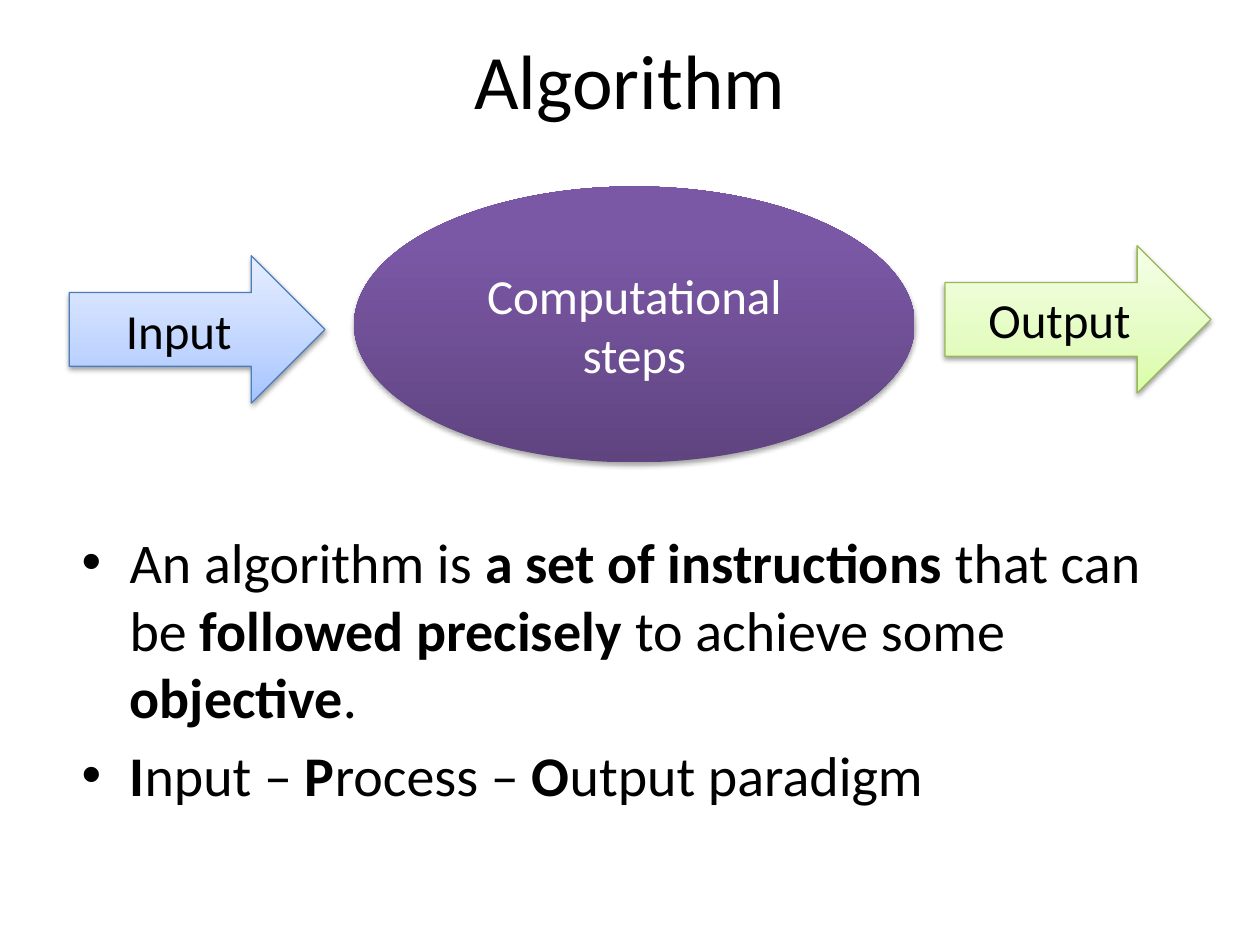
"""Build the algorithm slide: input, computational steps, output and a definition."""
from copy import deepcopy
from dataclasses import dataclass
from typing import Any, Optional

from lxml.etree import SubElement
from pptx import Presentation
from pptx.dml.color import RGBColor
from pptx.enum.shapes import MSO_SHAPE
from pptx.enum.text import MSO_ANCHOR, PP_ALIGN
from pptx.oxml.ns import qn
from pptx.util import Inches, Pt

BLACK = RGBColor(0x00, 0x00, 0x00)
WHITE = RGBColor(0xFF, 0xFF, 0xFF)
BLUE_LINE = RGBColor(0x4B, 0x7E, 0xBC)
BLUES = (RGBColor(0xA4, 0xC4, 0xFF), RGBColor(0xBF, 0xD4, 0xFF), RGBColor(0xE6, 0xEE, 0xFF))
PURPLES = (RGBColor(0x5F, 0x44, 0x80), RGBColor(0x7B, 0x58, 0xA6), RGBColor(0x7C, 0x57, 0xA8))
GREEN_LINE = RGBColor(0x98, 0xB9, 0x55)
GREENS = (RGBColor(0xDA, 0xFD, 0xA7), RGBColor(0xE4, 0xFC, 0xC2), RGBColor(0xF5, 0xFF, 0xE7))


@dataclass(frozen=True)
class Stage:
    label: str
    geometry: MSO_SHAPE
    box: tuple[float, float, float, float]
    gradient: tuple[RGBColor, ...]
    middle_stop: float
    ink: RGBColor
    outline: Optional[RGBColor]
    shadow_distance: float
    shadow_opacity: int


STAGES = (
    Stage("Input", MSO_SHAPE.RIGHT_ARROW, (0.55, 2.03, 2.03, 1.17),
          BLUES, 0.35, BLACK, BLUE_LINE, 1.6, 38),
    Stage("Computational steps", MSO_SHAPE.OVAL, (2.81, 1.48, 4.45, 2.19),
          PURPLES, 0.8, WHITE, None, 1.8, 35),
    Stage("Output", MSO_SHAPE.RIGHT_ARROW, (7.5, 1.95, 2.11, 1.17),
          GREENS, 0.35, BLACK, GREEN_LINE, 1.6, 38),
)

DEFINITION = (
    (("An algorithm is ", False), ("a set of instructions ", True), ("that can be ", False),
     ("followed precisely ", True), ("to achieve some ", False), ("objective", True),
     (".", False)),
    (("I", True), ("nput – ", False), ("P", True), ("rocess – ", False),
     ("O", True), ("utput paradigm", False)),
)


def apply_format(target: Any, values: dict[str, Any]) -> None:
    """Set each named attribute on the target."""
    for name, value in values.items():
        setattr(target, name, value)


def format_font(font: Any, size: int, ink: RGBColor, bold: bool = False) -> None:
    """Give a font its face, size, weight and colour."""
    apply_format(font, {"name": "Calibri", "size": Pt(size), "bold": bold})
    font.color.rgb = ink


def write_centred(shape: Any, text: str, size: int, ink: RGBColor) -> None:
    """Write one centred paragraph in the middle of a shape."""
    frame = shape.text_frame
    apply_format(frame, {"text": text, "word_wrap": True,
                         "vertical_anchor": MSO_ANCHOR.MIDDLE})
    paragraph = frame.paragraphs[0]
    paragraph.alignment = PP_ALIGN.CENTER
    format_font(paragraph.runs[0].font, size, ink)


def fill_gradient(shape: Any, stage: Stage) -> None:
    """Fill a shape from bottom to top with three colours."""
    shape.fill.gradient()
    shape.fill.gradient_angle = 90
    stop_list = next(shape._element.spPr.iter(qn("a:gsLst")))
    stop_list.append(deepcopy(stop_list[0]))
    positions = (0, stage.middle_stop, 1)
    for stop, position, color in zip(shape.fill.gradient_stops, positions, stage.gradient):
        stop.position = position
        stop.color.rgb = color


def cast_shadow(shape: Any, stage: Stage) -> None:
    """Add a soft shadow below a shape."""
    shape.shadow.inherit = False
    effects = shape._element.spPr.find(qn("a:effectLst"))
    shadow = SubElement(effects, qn("a:outerShdw"), blurRad=str(Pt(3.1)),
                        dist=str(Pt(stage.shadow_distance)), dir="5400000", rotWithShape="0")
    color = SubElement(shadow, qn("a:srgbClr"), val=str(BLACK))
    SubElement(color, qn("a:alpha"), val=str(stage.shadow_opacity * 1000))


def draw_stage(slide: Any, stage: Stage) -> None:
    """Draw one stage of the process."""
    shape = slide.shapes.add_shape(stage.geometry, *map(Inches, stage.box))
    fill_gradient(shape, stage)
    if stage.outline is None:
        shape.line.fill.background()
    else:
        shape.line.color.rgb = stage.outline
        shape.line.width = Pt(0.75)
    cast_shadow(shape, stage)
    write_centred(shape, stage.label, 28, stage.ink)


def draw_definition(slide: Any) -> None:
    """Write the bulleted definition."""
    box = slide.shapes.add_textbox(*map(Inches, (0.55, 4.14, 8.95, 2.97)))
    frame = box.text_frame
    frame.word_wrap = True
    for index, phrases in enumerate(DEFINITION):
        paragraph = frame.add_paragraph() if index else frame.paragraphs[0]
        paragraph.space_before = Pt(6.4)
        properties = paragraph._p.get_or_add_pPr()
        properties.set("marL", str(Inches(0.38)))
        properties.set("indent", str(Inches(-0.38)))
        SubElement(properties, qn("a:buFont"), typeface="Arial")
        SubElement(properties, qn("a:buChar"), char="•")
        for text, bold in phrases:
            run = paragraph.add_run()
            run.text = text
            format_font(run.font, 32, BLACK, bold)


def main() -> None:
    """Build and save the slide."""
    deck = Presentation()
    apply_format(deck, {"slide_width": Inches(10), "slide_height": Inches(7.5)})
    slide = deck.slides.add_slide(deck.slide_layouts[5])
    title = slide.shapes.title
    apply_format(title, {"left": Inches(0.5), "top": Inches(0),
                         "width": Inches(9), "height": Inches(1.25)})
    write_centred(title, "Algorithm", 44, BLACK)
    draw_definition(slide)
    for stage in STAGES:
        draw_stage(slide, stage)
    deck.save("out.pptx")


if __name__ == "__main__":
    main()
